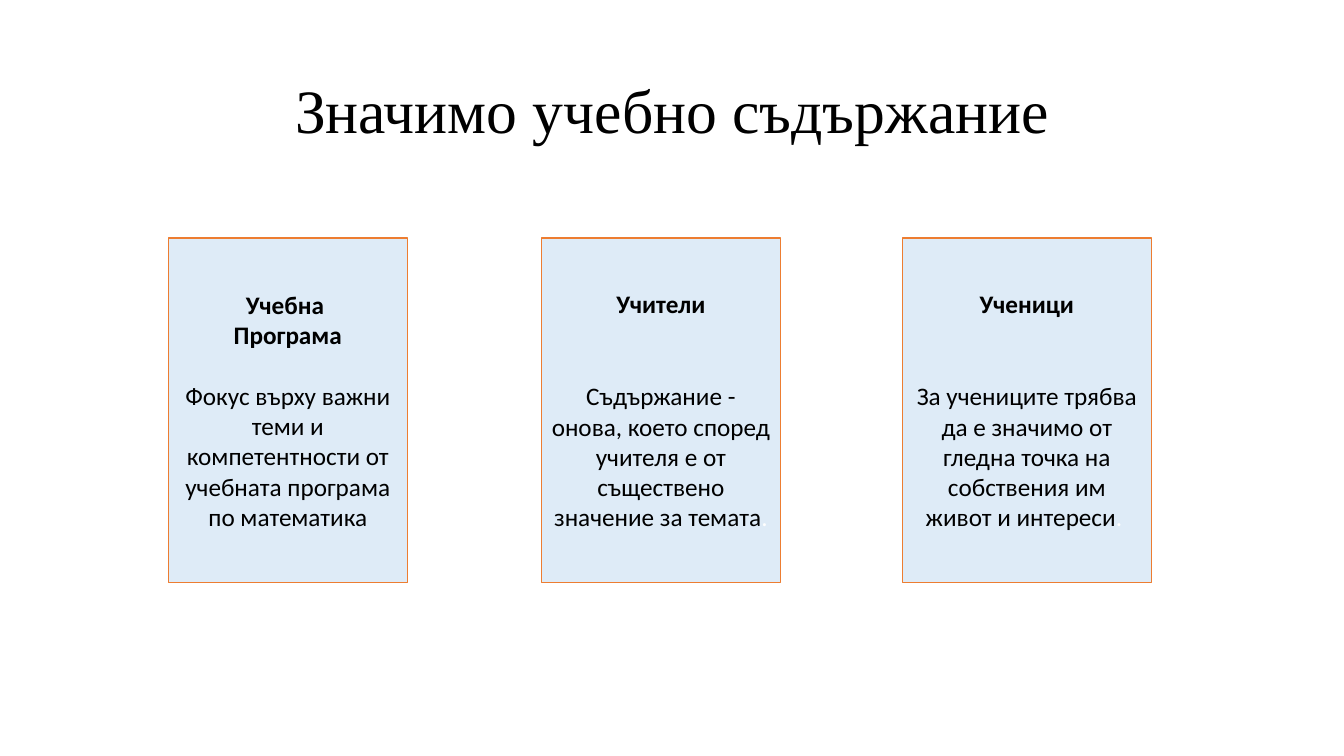
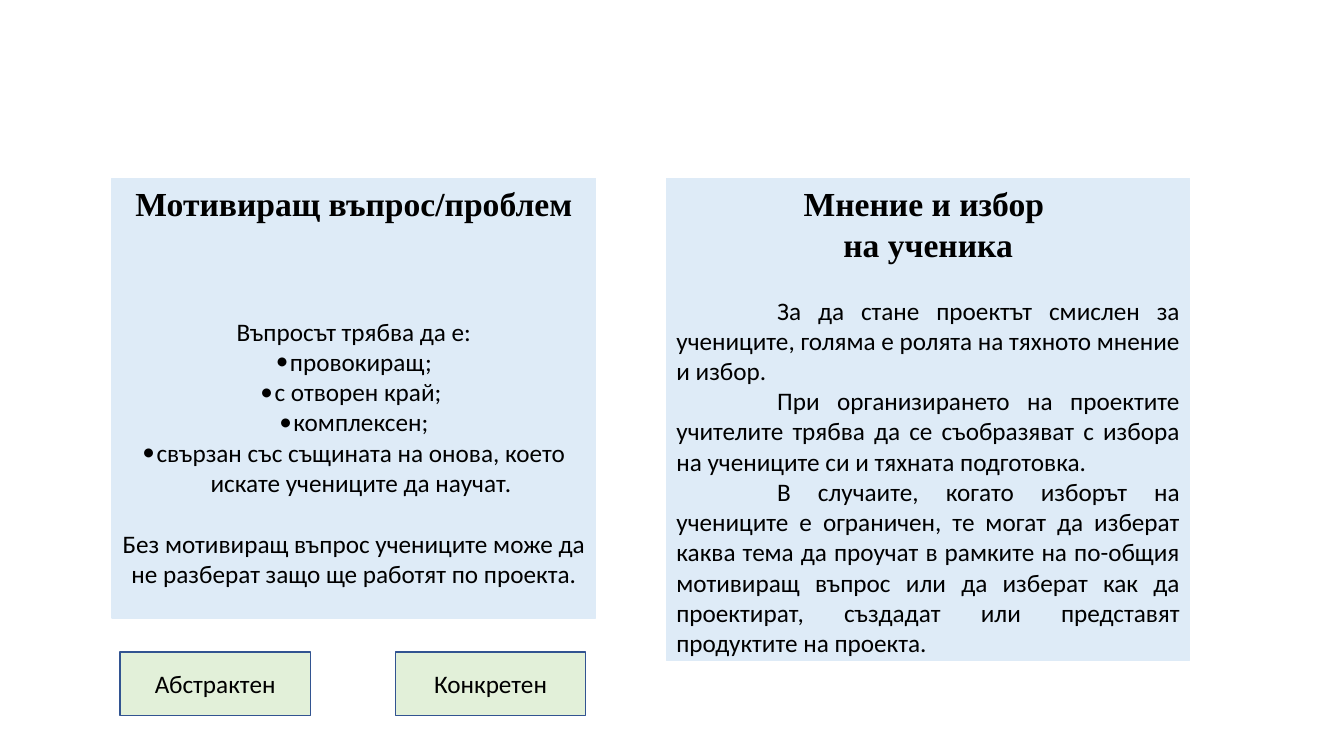
from lxml import etree
from pptx import Presentation
from pptx.dml.color import RGBColor
from pptx.enum.shapes import MSO_SHAPE
from pptx.enum.text import MSO_ANCHOR, PP_ALIGN
from pptx.oxml.ns import qn
from pptx.util import Inches, Pt

RECTANGLE = MSO_SHAPE.RECTANGLE
TOP, MIDDLE = MSO_ANCHOR.TOP, MSO_ANCHOR.MIDDLE
CENTER, JUSTIFY = PP_ALIGN.CENTER, PP_ALIGN.JUSTIFY
BLACK, WHITE = "000000", "FFFFFF"
PALE_BLUE, PALE_GREEN = "DEEBF7", "E2F0D9"
ORANGE, NAVY = "ED7D31", "325491"
HEADING_FONT, BODY_FONT = "Times New Roman", "Calibri"
BODY_SIZE = 18
BODY_LINE = 22
BULLET_INDENT = 0.14


def rgb(value):
    """Turn a hex string into a colour."""
    return RGBColor.from_string(value)


def add_run(paragraph, text, size=BODY_SIZE, font=BODY_FONT, bold=False, color=BLACK):
    """Add one formatted run to a paragraph."""
    run = paragraph.add_run()
    run.text = text
    run.font.size = Pt(size)
    run.font.name = font
    run.font.bold = bold
    run.font.color.rgb = rgb(color)


def add_paragraph(frame, text, align=CENTER, gap_lines=0, **style):
    """Add a paragraph after a gap of whole body lines, reusing an empty first one."""
    first = frame.paragraphs[0]
    paragraph = frame.add_paragraph() if first.runs else first
    paragraph.alignment = align
    paragraph.space_before = Pt(gap_lines * BODY_LINE)
    add_run(paragraph, text, **style)
    return paragraph


def set_indent(paragraph, left, first_line):
    """Set the left margin and first-line indent of a paragraph."""
    properties = paragraph._p.get_or_add_pPr()
    properties.set("marL", str(Inches(left)))
    properties.set("indent", str(Inches(first_line)))
    return properties


def add_bullet(frame, text):
    """Add a centred bullet point."""
    properties = set_indent(add_paragraph(frame, text), BULLET_INDENT, -BULLET_INDENT)
    etree.SubElement(properties, qn("a:buFont")).set("typeface", BODY_FONT)
    etree.SubElement(properties, qn("a:buChar")).set("char", "•")


def add_box(slide, box, fill, line, anchor=MIDDLE):
    """Draw a filled rectangle and return its text frame."""
    shape = slide.shapes.add_shape(RECTANGLE, *map(Inches, box))
    shape.shadow.inherit = False
    shape.fill.solid()
    shape.fill.fore_color.rgb = rgb(fill)
    shape.line.color.rgb = rgb(line)
    shape.line.width = Pt(1)
    frame = shape.text_frame
    frame.word_wrap = True
    frame.vertical_anchor = anchor
    return frame


def add_title(slide, box, text):
    """Place the slide title."""
    frame = slide.shapes.add_textbox(*map(Inches, box)).text_frame
    frame.word_wrap = True
    frame.vertical_anchor = MIDDLE
    paragraph = add_paragraph(frame, text, size=44, font=HEADING_FONT)
    paragraph.line_spacing = 0.9


def add_card(slide, box, heading, body, ending):
    """Place a card whose body starts on the fourth line."""
    frame = add_box(slide, box, PALE_BLUE, ORANGE)
    for line in heading:
        add_paragraph(frame, line, bold=True)
    paragraph = add_paragraph(frame, body, gap_lines=3 - len(heading))
    if ending:
        add_run(paragraph, ending, color=WHITE)


def add_panel(slide, box, heading):
    """Place a panel with its heading and return its text frame."""
    frame = add_box(slide, box, PALE_BLUE, PALE_BLUE, TOP)
    for line in heading:
        add_paragraph(frame, line, size=24, font=HEADING_FONT, bold=True)
    return frame


def add_question_panel(slide, box):
    """Place the panel on the driving question."""
    frame = add_panel(slide, box, ["Мотивиращ въпрос/проблем"])
    add_paragraph(frame, "Въпросът трябва да е:", gap_lines=3)
    for quality in (
        "провокиращ;",
        "с отворен край; ",
        "комплексен;",
        "свързан със същината на онова, което искате учениците да научат.",
    ):
        add_bullet(frame, quality)
    add_paragraph(
        frame,
        "Без мотивиращ въпрос учениците може да не разберат защо ще работят по проекта.",
        gap_lines=1,
    )


def add_choice_panel(slide, box):
    """Place the panel on the student's opinion and choice."""
    frame = add_panel(slide, box, ["Мнение и избор ", "на ученика"])
    arguments = (
        "За да стане проектът смислен за учениците, голяма е ролята на тяхното "
        "мнение и избор.",
        "При организирането на проектите учителите трябва да се съобразяват с "
        "избора на учениците си и тяхната подготовка. ",
        "В случаите, когато изборът на учениците е ограничен, те могат да изберат "
        "каква тема да проучат в рамките на по-общия мотивиращ въпрос или да изберат "
        "как да проектират, създадат или представят продуктите на проекта.",
    )
    for index, argument in enumerate(arguments):
        paragraph = add_paragraph(frame, argument, JUSTIFY, gap_lines=int(index == 0))
        set_indent(paragraph, 0, 1)


def build_content_slide(slide):
    """Build the slide on meaningful learning content."""
    add_title(slide, (0.92, 0.4, 11.5, 1.45), "Значимо учебно съдържание")
    cards = (
        (1.67, 2.37, ["Учебна ", "Програма"],
         "Фокус върху важни теми и компетентности от учебната програма по математика", ""),
        (5.37, 2.37, ["Учители"],
         "Съдържание - онова, което според учителя е от съществено значение за темата", "."),
        (8.95, 2.47, ["Ученици"],
         "За учениците трябва да е значимо от гледна точка на собствения им живот "
         "и интереси", ". "),
    )
    for left, width, heading, body, ending in cards:
        add_card(slide, (left, 2.36, width, 3.42), heading, body, ending)


def build_question_slide(slide):
    """Build the slide on the driving question and student choice."""
    add_question_panel(slide, (1.11, 1.77, 4.8, 4.36))
    add_choice_panel(slide, (6.61, 1.77, 5.19, 4.78))
    for index, kind in enumerate(("Абстрактен", "Конкретен")):
        box = (1.19 + index * 2.73, 6.47, 1.89, 0.63)
        add_paragraph(add_box(slide, box, PALE_GREEN, NAVY), kind)


def main():
    """Build and save the presentation."""
    deck = Presentation()
    deck.slide_width, deck.slide_height = Inches(13.33), Inches(7.5)
    for build in (build_content_slide, build_question_slide):
        build(deck.slides.add_slide(deck.slide_layouts[6]))
    deck.save("out.pptx")


if __name__ == "__main__":
    main()
